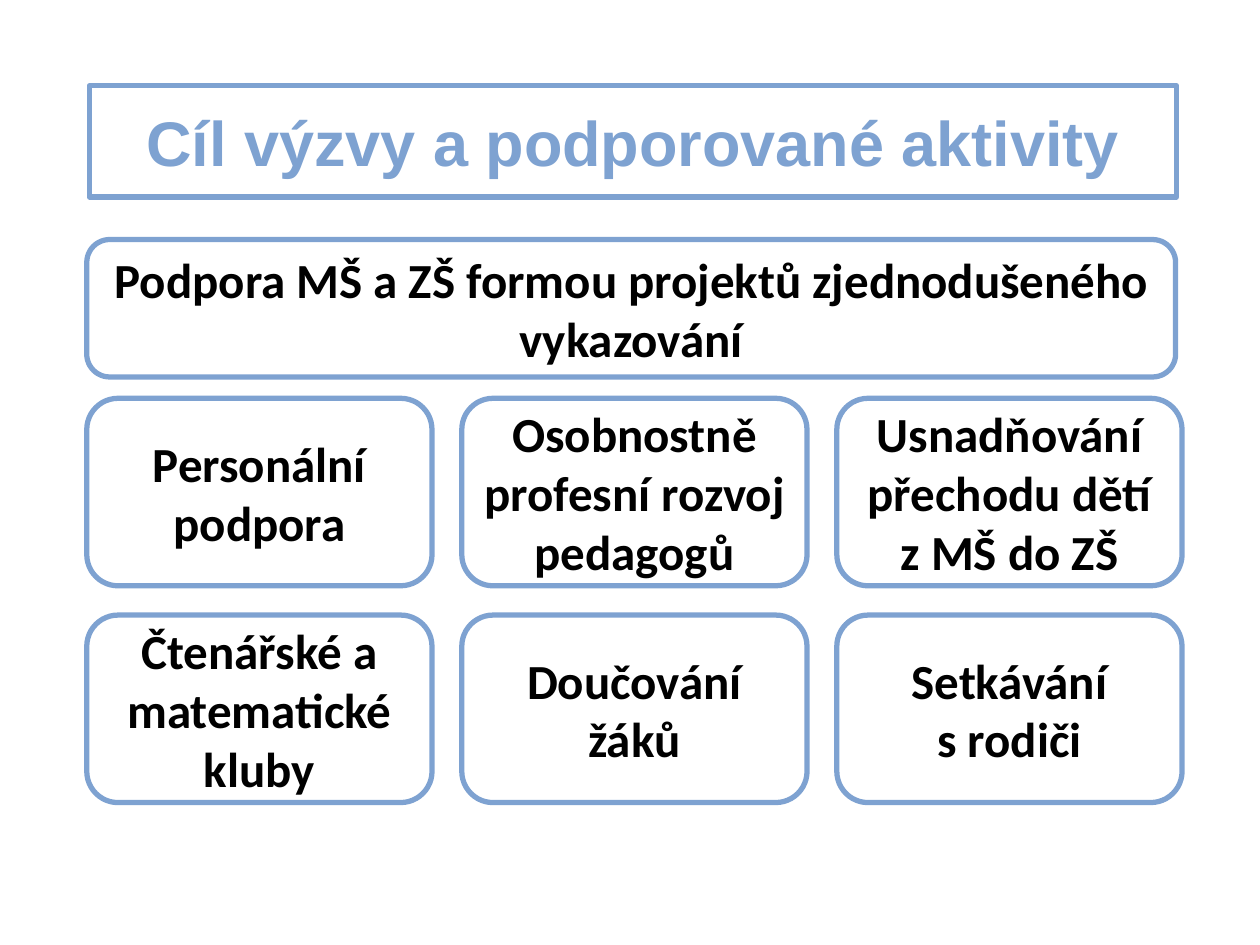
from lxml.etree import SubElement
from pptx import Presentation
from pptx.dml.color import RGBColor
from pptx.enum.shapes import MSO_SHAPE
from pptx.enum.text import MSO_ANCHOR, MSO_AUTO_SIZE, PP_ALIGN
from pptx.oxml.ns import qn
from pptx.util import Cm, Pt

TITLE = "Cíl výzvy a podporované aktivity"
GOAL = "Podpora MŠ a ZŠ formou projektů zjednodušeného vykazování"
ACTIVITIES = [
    ["Personální podpora", "Osobnostně profesní rozvoj pedagogů",
     "Usnadňování přechodu dětí z MŠ do ZŠ"],
    ["Čtenářské a\u00a0matematické kluby".replace("\u00a0", " "), "Doučování žáků",
     "Setkávání\ns rodiči"],
]

BLUE = RGBColor(0x7E, 0xA2, 0xD1)
BLACK = RGBColor(0, 0, 0)
WHITE = RGBColor(0xFF, 0xFF, 0xFF)

LEFT, GRID_TOP = 1.75, 8.03
BOX_W, BOX_H = 6.96, 3.78
STEP_X, STEP_Y = 7.56, 4.37


def format_box(sp, text, font, size, color):
    sp.line.color.rgb = BLUE
    sp.line.width = Pt(3)
    tf = sp.text_frame
    tf.text = text
    tf.word_wrap = True
    tf.auto_size = MSO_AUTO_SIZE.NONE
    tf.vertical_anchor = MSO_ANCHOR.MIDDLE
    for p in tf.paragraphs:
        p.alignment = PP_ALIGN.CENTER
        for r in p.runs:
            r.font.name = font
            r.font.size = Pt(size)
            r.font.bold = True
            r.font.color.rgb = color


def add_box(s, text, x, y, w, h):
    sp = s.shapes.add_shape(MSO_SHAPE.ROUNDED_RECTANGLE, Cm(x), Cm(y), Cm(w), Cm(h))
    sp.shadow.inherit = False
    sp.fill.background()
    format_box(sp, text, "Calibri", 28, BLACK)


def add_title(s):
    sp = s.shapes.title
    sp.left, sp.top, sp.width, sp.height = Cm(1.8), Cm(1.73), Cm(21.92), Cm(2.24)
    geom = SubElement(sp._element.spPr, qn("a:prstGeom"), prst="roundRect")
    SubElement(geom, qn("a:avLst"))
    sp.fill.solid()
    sp.fill.fore_color.rgb = WHITE
    format_box(sp, TITLE, "Arial", 36, BLUE)


def main():
    prs = Presentation()
    prs.slide_width, prs.slide_height = Cm(25.4), Cm(19.05)
    s = prs.slides.add_slide(prs.slide_layouts[5])
    add_title(s)
    add_box(s, GOAL, LEFT, 4.83, 21.95, 2.77)
    for i, row in enumerate(ACTIVITIES):
        for j, text in enumerate(row):
            add_box(s, text, LEFT + j * STEP_X, GRID_TOP + i * STEP_Y, BOX_W, BOX_H)
    prs.save("out.pptx")


if __name__ == "__main__":
    main()
